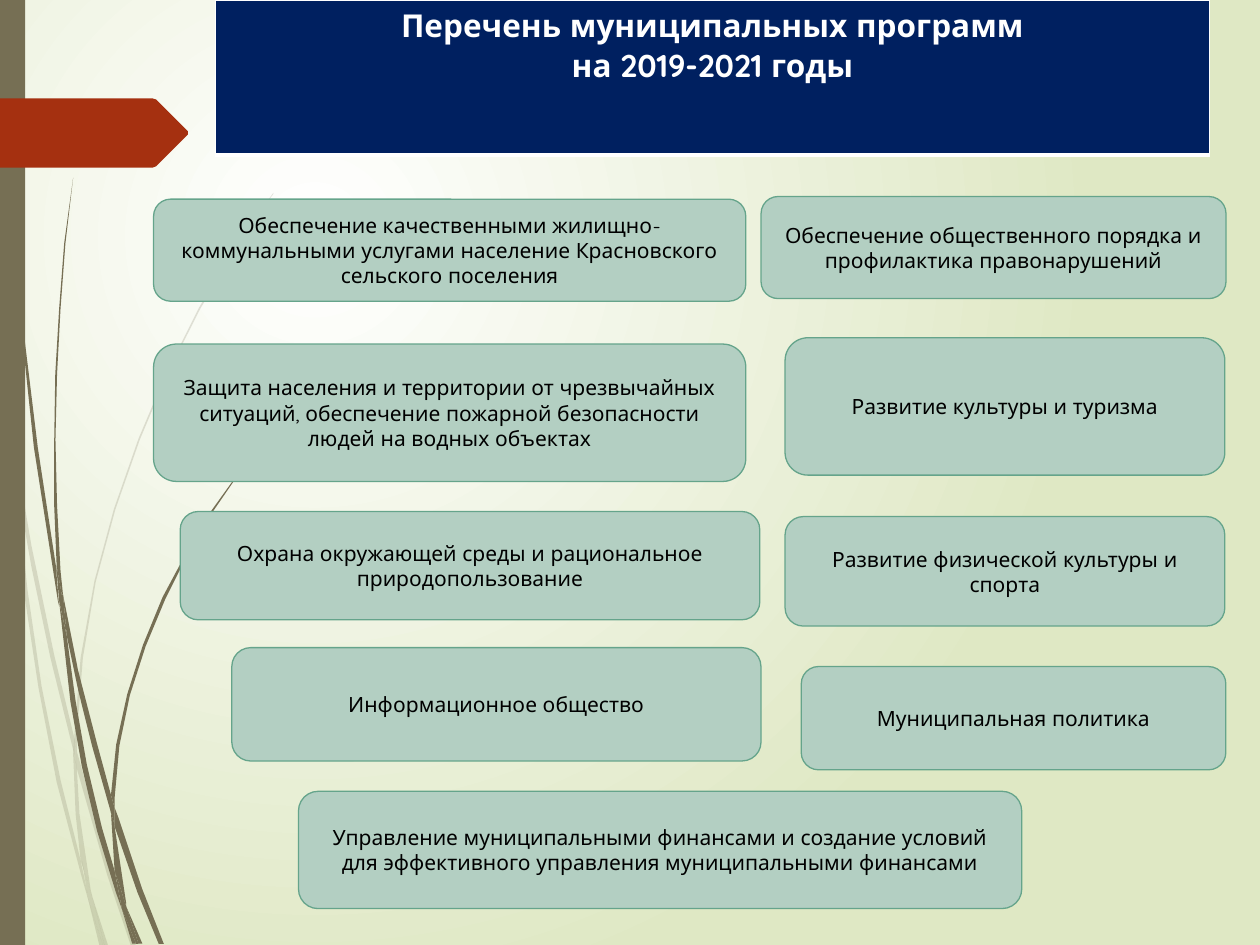
import pptx
import pptx.util
import pptx.dml.color
import pptx.enum.shapes
import pptx.enum.text
import pptx.oxml
import pptx.oxml.ns

Pt = pptx.util.Pt
RGB = pptx.dml.color.RGBColor
WHITE = RGB(0xFF, 0xFF, 0xFF)
BLACK = RGB(0x00, 0x00, 0x00)
LIME = RGB(0xDF, 0xE8, 0xC4)
OLIVE = RGB(0x76, 0x6F, 0x54)
RUST = RGB(0xA5, 0x30, 0x10)
NAVY = RGB(0x00, 0x20, 0x60)
SAGE = RGB(0xB3, 0xCF, 0xC2)
GREEN = RGB(0x65, 0xA4, 0x8B)
FONT = "Quicksand"
NS = pptx.oxml.ns.nsdecls("a")
SHAPE = pptx.enum.shapes.MSO_SHAPE
CENTER = pptx.enum.text.PP_ALIGN.CENTER

PALE = [
    [(5.8, 252), (4.3, 231.8), (0, 203), (0, 215.3), (5, 247.7)],
    [(28.8, 375.8), (42.5, 431.3), (42.5, 421.9), (31, 374.4), (18, 311.9),
     (7.2, 248.4), (8.6, 270.7), (17.9, 323.6)],
    [(46.1, 437), (43.9, 429.1), (43.9, 439.2), (61.2, 499.7), (74.9, 540.7),
     (77.8, 540.7), (63.4, 498.2)],
    [(59.8, 540.7), (61.9, 540.7), (52.6, 511.9)],
    [(46.1, 491.8), (34.6, 445.7), (23.8, 392.4), (15.8, 337.7), (8.6, 270.7),
     (5.8, 252), (8.9, 295.2), (13.7, 338.4), (22, 393.1), (32.4, 447.1),
     (46.1, 499), (50.4, 514.1), (49.7, 509)],
    [(41.8, 431.3), (43.2, 465.1), (46.1, 491.8), (48.2, 498.2), (52.6, 511.9),
     (51.8, 508.3), (45.4, 465.1), (43.9, 439.2), (43.9, 437.8)],
    [(43.9, 420.5), (47.4, 375.8), (54.7, 332.6), (66, 290.9), (79.9, 251.3),
     (96.1, 212.8), (114.5, 176.4), (134.6, 142.6), (144.7, 126), (156.2, 110.9),
     (156.2, 110.2), (144.7, 126), (133.9, 141.8), (113.8, 175.7), (95.4, 212.4),
     (79.2, 250.6), (65.1, 290.9), (54, 331.9), (46.1, 375.8), (42.5, 420.5),
     (42.5, 421.9), (43.9, 429.1)],
    [(50.4, 514.1), (56.9, 540.7), (59, 540.7)],
    [(43.9, 437.8), (43.9, 439.2), (43.9, 429.1), (42.5, 421.9), (41.8, 431.3)],
    [(48.2, 498.2), (46.8, 491.8), (49.7, 509), (50.4, 514.1), (59, 540.7),
     (59.8, 540.7), (52.6, 511.9)],
]
DARK = [
    [(3.6, 79.2), (10.1, 167.8), (19.4, 255.6), (33.1, 343.4), (33.8, 346.3),
     (32.4, 329), (32.4, 326.2), (21.6, 255.6), (10.8, 167), (4.3, 78.5),
     (2.9, 34.6), (2.2, 0), (1.4, 0), (2.2, 34.6)],
    [(52.6, 426.2), (63.4, 464.4), (63.4, 455.8), (63.4, 454.3), (55.4, 424.8),
     (44.6, 383), (36, 339.8), (38.2, 363.6), (44.8, 394.9)],
    [(67.7, 467.3), (65.5, 461.5), (65.5, 472.3), (78.5, 509.8), (90.7, 539.3),
     (93.6, 539.3), (81.4, 508.3)],
    [(65.5, 497.5), (58.3, 473), (49.7, 437), (43.2, 400.3), (38.2, 363.6),
     (33.8, 343.4), (40.3, 401), (46.8, 437.8), (55.4, 474.5), (66.2, 509.8),
     (69.8, 519.8), (69.1, 516.2)],
    [(36, 339.8), (34.6, 326.2), (32.6, 288.7), (31.7, 251.3), (32.6, 213.8),
     (34.6, 176.4), (37.4, 139), (41.8, 101.5), (36.7, 139), (33.8, 176.4),
     (31.6, 213.8), (31, 251.3), (30.9, 287.3), (32.4, 323.3), (35.3, 339.8)],
    [(79.2, 539.3), (81.4, 539.3), (72, 517.7)],
    [(33.8, 343.4), (38.2, 363.6), (36, 339.8), (35.3, 339.8), (32.4, 323.3),
     (32.4, 326.2)],
    [(65.5, 455.8), (68.2, 426.2), (74.2, 397.4), (83.2, 369.4), (94.3, 342.7),
     (107.2, 316.8), (121.7, 292.3), (137.5, 269.3), (146.2, 258.5),
     (155.5, 247.7), (154.8, 247.7), (146.2, 257.8), (137.5, 268.6),
     (121, 291.6), (106.4, 316.1), (92.9, 341.3), (81.7, 368.6), (72.7, 396.7),
     (66.4, 425.5), (63.4, 454.3), (65.5, 461.5)],
    [(69.8, 519.8), (75.6, 539.3), (77.8, 539.3)],
    [(63.4, 464.4), (65.5, 497.5), (69.1, 508.3), (72, 517.7), (72, 515.5),
     (65.5, 472.3), (64.8, 468.7)],
    [(63.4, 464.4), (64.8, 468.7), (65.5, 472.3), (65.5, 461.5), (63.4, 454.3),
     (63.4, 455.8)],
    [(69.1, 508.3), (65.5, 497.5), (69.1, 516.2), (69.8, 519.8), (77.8, 539.3),
     (79.2, 539.3), (72, 517.7)],
]
ARROW = [(107.3, 20.8), (89.3, 38.8), (87.1, 39.6), (0, 39.6), (0, 0),
         (87.1, 0), (89.3, 0.7), (107.3, 18.7)]
TITLE = ["Перечень муниципальных программ", "на 2019-2021 годы"]
ITEMS = [
    (0, 1.5, 338.4, 58.3, "Обеспечение качественными жилищно-коммунальными "
     "услугами население Красновского сельского поселения"),
    (347.1, 0, 265.7, 58.3,
     "Обеспечение общественного порядка и профилактика правонарушений"),
    (360.8, 80.7, 251.3, 78.5, "Развитие культуры и туризма"),
    (360.8, 182.9, 251.3, 62.6, "Развитие физической культуры и спорта"),
    (0, 84.3, 338.4, 78.5, "Защита населения и территории от чрезвычайных "
     "ситуаций, обеспечение пожарной безопасности людей на водных объектах"),
    (15.2, 180, 331.2, 61.9,
     "Охрана окружающей среды и рациональное природопользование"),
    (44.7, 257.8, 302.4, 64.8, "Информационное общество"),
    (370.1, 268.6, 242.6, 59, "Муниципальная политика"),
    (82.8, 339.9, 413.3, 67, "Управление муниципальными финансами и создание "
     "условий для эффективного управления муниципальными финансами"),
]


def paint(shape, color, edge=None):
    """Fill a shape, with an optional thin edge and no shadow."""
    shape.shadow.inherit = False
    shape.fill.solid()
    shape.fill.fore_color.rgb = color
    if edge is None:
        shape.line.fill.background()
    else:
        shape.line.color.rgb = edge
        shape.line.width = Pt(0.75)


def style(para, size, color, bold=False):
    """Center a paragraph and set its font."""
    para.alignment = CENTER
    para.font.name = FONT
    para.font.size = Pt(size)
    para.font.bold = bold
    para.font.color.rgb = color


def add_form(slide, left, top, points, color):
    """Draw a closed outline offset from the given corner."""
    spots = [(Pt(left + x), Pt(top + y)) for x, y in points]
    form = slide.shapes.build_freeform(*spots[0])
    form.add_line_segments(spots[1:])
    shape = form.convert_to_shape()
    paint(shape, color)
    return shape


def add_back(slide):
    """Set the round white glow of the background."""
    fill = slide.background.fill
    fill.gradient()
    for stop, color, place in zip(fill.gradient_stops, (WHITE, LIME), (0, 1)):
        stop.color.rgb = color
        stop.position = place
    grad = slide.background._cSld.bg.bgPr.find(pptx.oxml.ns.qn("a:gradFill"))
    lin = grad.find(pptx.oxml.ns.qn("a:lin"))
    glow = pptx.oxml.parse_xml(
        f'<a:path {NS} path="circle"><a:fillToRect l="50000" t="50000" '
        'r="100000" b="100000"/></a:path>')
    grad.replace(lin, glow)


def add_side(slide, left, top, width, height):
    """Place the grass blades, side bar and arrow tag."""
    for blade in PALE:
        shape = add_form(slide, left, top, blade, OLIVE)
        tint = next(shape._element.spPr.iter(pptx.oxml.ns.qn("a:srgbClr")))
        tint.append(pptx.oxml.parse_xml(f'<a:alpha {NS} val="20000"/>'))
    for blade in DARK:
        add_form(slide, left, top, blade, OLIVE)
    bar = slide.shapes.add_shape(
        SHAPE.RECTANGLE, Pt(left), Pt(top), Pt(width), Pt(height))
    paint(bar, OLIVE)
    add_form(slide, left, top + 56.2, ARROW, RUST)


def add_title(slide, left, top, width, height):
    """Place the heading as a table of one cell with white borders."""
    frame = slide.shapes.add_table(
        1, 1, Pt(left), Pt(top), Pt(width), Pt(height))
    cell = frame.table.cell(0, 0)
    cell.fill.solid()
    cell.fill.fore_color.rgb = NAVY
    cell.text = "\n".join(TITLE)
    for para in cell.text_frame.paragraphs:
        style(para, 18, WHITE, True)
    props = cell._tc.get_or_add_tcPr()
    for spot, (side, size) in enumerate(zip("LRTB", (1, 1, 1, 3))):
        props.insert(spot, pptx.oxml.parse_xml(
            f'<a:ln{side} {NS} w="{Pt(size)}"><a:solidFill>'
            f'<a:srgbClr val="{WHITE}"/></a:solidFill></a:ln{side}>'))


def add_items(slide, left, top):
    """Place the program boxes relative to the given corner."""
    for x, y, width, height, text in ITEMS:
        box = slide.shapes.add_shape(
            SHAPE.ROUNDED_RECTANGLE, Pt(left + x), Pt(top + y),
            Pt(width), Pt(height))
        paint(box, SAGE, GREEN)
        frame = box.text_frame
        frame.word_wrap = True
        frame.vertical_anchor = pptx.enum.text.MSO_ANCHOR.MIDDLE
        frame.text = text
        style(frame.paragraphs[0], 12, BLACK)


def main():
    """Build and save the slide."""
    deck = pptx.Presentation()
    deck.slide_width, deck.slide_height = Pt(720), Pt(540)
    slide = deck.slides.add_slide(deck.slide_layouts[6])
    add_back(slide)
    add_side(slide, 0, 0, 14.4, 540)
    add_title(slide, 123.1, 0, 568.1, 88.6)
    add_items(slide, 87.8, 112.3)
    deck.save("out.pptx")


if __name__ == "__main__":
    main()
